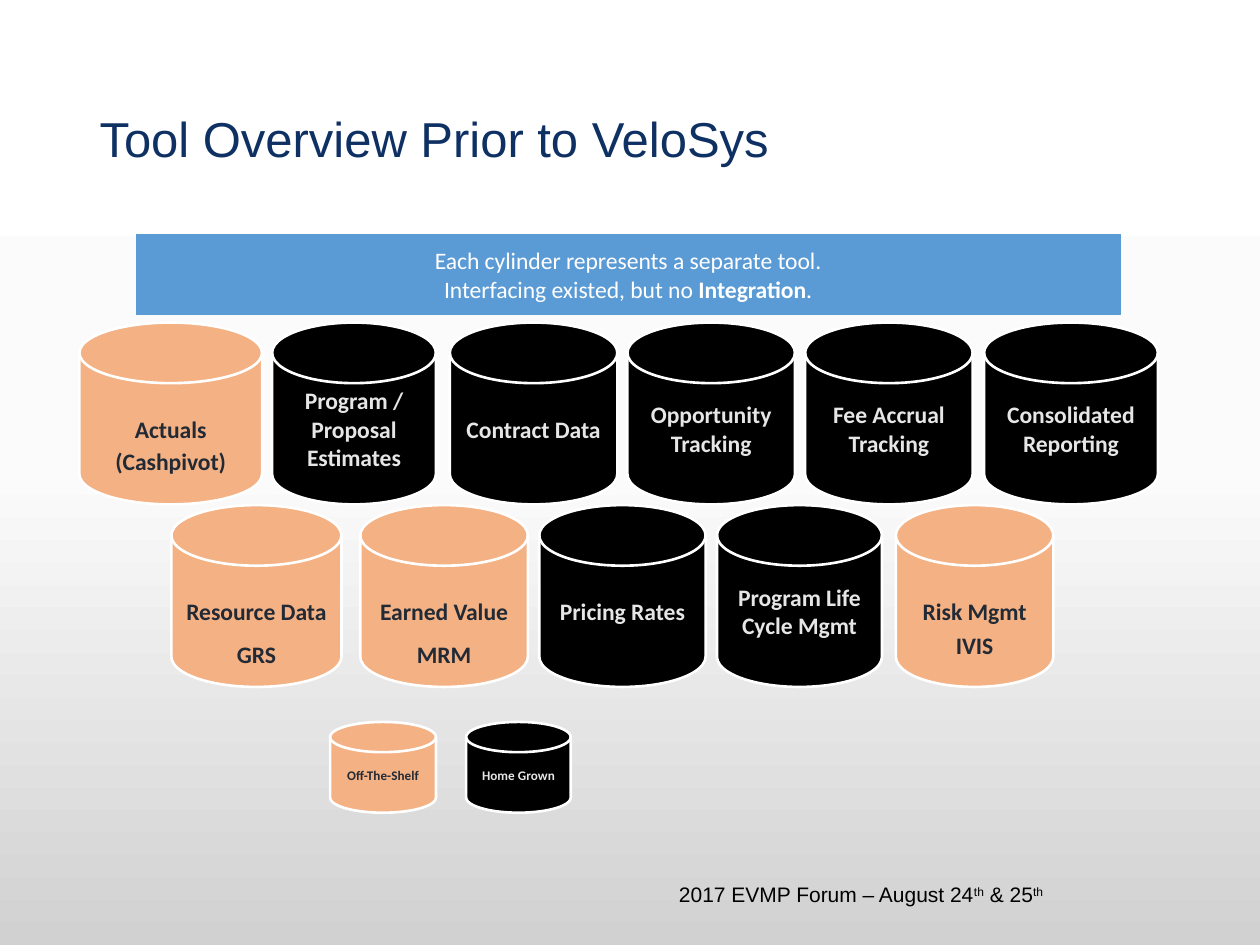
"""Build the tool overview slide with its cylinders of separate tools."""
import copy
import dataclasses
import typing

import pptx
import pptx.dml.color
import pptx.enum.shapes
import pptx.enum.text
import pptx.oxml.ns
import pptx.util

RGB = pptx.dml.color.RGBColor
Kind = pptx.enum.shapes.MSO_SHAPE
Align = pptx.enum.text.PP_ALIGN
Anchor = pptx.enum.text.MSO_ANCHOR

WHITE = RGB(0xFF, 0xFF, 0xFF)
MIST = RGB(0xFB, 0xFB, 0xFB)
GREY = RGB(0xD1, 0xD1, 0xD1)
BLACK = RGB(0, 0, 0)
PALE = RGB(0xE7, 0xE6, 0xE6)
PEACH = RGB(0xF4, 0xB1, 0x83)
SLATE = RGB(0x22, 0x2A, 0x35)
NAVY = RGB(0x0F, 0x30, 0x63)
BLUE = RGB(0x5B, 0x9B, 0xD5)

WIDE = pptx.util.Inches(10)
HIGH = pptx.util.Inches(7.5)
TAG_PAD = 1
TAG_HIGH = 3.47


@dataclasses.dataclass
class Box:
    """Place as percent shares of the slide's width and height."""
    left: float
    top: float
    width: float
    height: float

    def emu(self) -> list[int]:
        """Return the place in slide units."""
        sides = (WIDE, HIGH, WIDE, HIGH)
        return [int(part * side / 100) for part, side in zip(dataclasses.astuple(self), sides)]


@dataclasses.dataclass
class Tool:
    """A cylinder with its column, width and optional lower tag."""
    label: str
    left: float
    width: float
    bought: bool = False
    tag: str = ""
    tag_top: float = 0


@dataclasses.dataclass
class Row:
    """A line of cylinders of one height and text size."""
    top: float
    height: float
    size: float
    tools: list[Tool]


@dataclasses.dataclass
class Part:
    """A run of text with its own weight or raise."""
    text: str
    bold: bool = False
    lift: bool = False


ROWS = [
    Row(34.13, 19.25, 13.5, [
        Tool("Actuals", 6.3, 14.5, True, "(Cashpivot)", 47.07),
        Tool("Program / Proposal Estimates", 21.6, 13),
        Tool("Contract Data", 35.7, 13.3),
        Tool("Opportunity Tracking", 49.8, 13.3),
        Tool("Fee Accrual Tracking", 63.9, 13.3),
        Tool("Consolidated Reporting", 78.1, 13.8),
    ]),
    Row(53.45, 19.25, 13.5, [
        Tool("Resource Data", 13.6, 13.5, True, "GRS", 67.47),
        Tool("Earned Value", 28.6, 13.3, True, "MRM", 67.47),
        Tool("Pricing Rates", 42.8, 13.2),
        Tool("Program Life Cycle Mgmt", 56.9, 13.1),
        Tool("Risk Mgmt", 71.1, 12.5, True, "IVIS", 66.53),
    ]),
    Row(76.4, 9.6, 7.5, [
        Tool("Off-The-Shelf", 26.2, 8.4, True),
        Tool("Home Grown", 37, 8.3),
    ]),
]


def set_all(item: typing.Any, form: dict[str, typing.Any]) -> None:
    """Set each named value on an object."""
    for name, value in form.items():
        setattr(item, name, value)


def write(frame: typing.Any, lines: list[list[Part]], size: float, tint: RGB,
          face: str = "Calibri", align: typing.Any = Align.CENTER,
          anchor: typing.Any = Anchor.MIDDLE) -> None:
    """Fill a text frame with lines of styled runs."""
    set_all(frame, {"word_wrap": True, "vertical_anchor": anchor})
    for num, parts in enumerate(lines):
        para = frame.add_paragraph() if num else frame.paragraphs[0]
        para.alignment = align
        for part in parts:
            run = para.add_run()
            run.text = part.text
            set_all(run.font, {"name": face, "size": pptx.util.Pt(size), "bold": part.bold})
            run.font.color.rgb = tint
            if part.lift:
                run.font._element.set("baseline", "30000")


def draw(shapes: typing.Any, kind: typing.Any, box: Box, fill: RGB,
         line: RGB | None = None, weight: float = 1.5) -> typing.Any:
    """Add a flat filled shape and return it."""
    shape = shapes.add_shape(kind, *box.emu())
    shape.shadow.inherit = False
    shape.fill.solid()
    shape.fill.fore_color.rgb = fill
    if line is None:
        shape.line.fill.background()
    else:
        shape.line.color.rgb = line
        shape.line.width = pptx.util.Pt(weight)
    return shape


def draw_tool(shapes: typing.Any, row: Row, tool: Tool) -> None:
    """Draw a cylinder, grouped with its tag if it has one."""
    fill, tint = (PEACH, SLATE) if tool.bought else (BLACK, PALE)
    home = shapes.add_group_shape().shapes if tool.tag else shapes
    box = Box(tool.left, row.top, tool.width, row.height)
    can = draw(home, Kind.FLOWCHART_MAGNETIC_DISK, box, fill, WHITE)
    write(can.text_frame, [[Part(tool.label, True)]], row.size, tint)
    if tool.tag:
        box = Box(tool.left + TAG_PAD, tool.tag_top, tool.width - 2 * TAG_PAD, TAG_HIGH)
        tag = draw(home, Kind.RECTANGLE, box, fill)
        write(tag.text_frame, [[Part(tool.tag, True)]], row.size, tint)


def shade(slide: typing.Any) -> None:
    """Give the slide a three-stop gradient from top to bottom."""
    fill = slide.background.fill
    fill.gradient()
    fill.gradient_angle = 270
    stops = slide.element.find(".//" + pptx.oxml.ns.qn("a:gsLst"))
    stops.insert(1, copy.deepcopy(stops[0]))
    for stop, place, tint in zip(fill.gradient_stops, (0, 0.5, 1), (WHITE, MIST, GREY)):
        stop.position = place
        stop.color.rgb = tint


def main() -> None:
    """Build and save the slide."""
    deck = pptx.Presentation()
    set_all(deck, {"slide_width": WIDE, "slide_height": HIGH})
    slide = deck.slides.add_slide(deck.slide_layouts[5])
    shade(slide)

    title = slide.shapes.title
    place = Box(6.9, 5.33, 86.2, 19.33).emu()
    set_all(title, dict(zip(("left", "top", "width", "height"), place)))
    write(title.text_frame, [[Part("Tool Overview Prior to VeloSys")]], 28, NAVY, "Arial", Align.LEFT)
    title.text_frame.paragraphs[0].line_spacing = 0.9

    for row in ROWS:
        for tool in row.tools:
            draw_tool(slide.shapes, row, tool)

    note = draw(slide.shapes, Kind.RECTANGLE, Box(10.8, 24.8, 78.1, 8.53), BLUE, BLUE, 0.5)
    write(note.text_frame, [
        [Part("Each cylinder represents a separate tool.")],
        [Part("Interfacing existed, but no "), Part("Integration", True), Part(".")],
    ], 13.5, WHITE)

    foot = slide.shapes.add_textbox(*Box(52.9, 92.67, 32.9, 5.33).emu())
    write(foot.text_frame, [[
        Part("2017 EVMP Forum – August 24"), Part("th", lift=True),
        Part(" & 25"), Part("th", lift=True),
    ]], 12, BLACK, "Arial", Align.LEFT, Anchor.TOP)
    deck.save("out.pptx")


if __name__ == "__main__":
    main()
